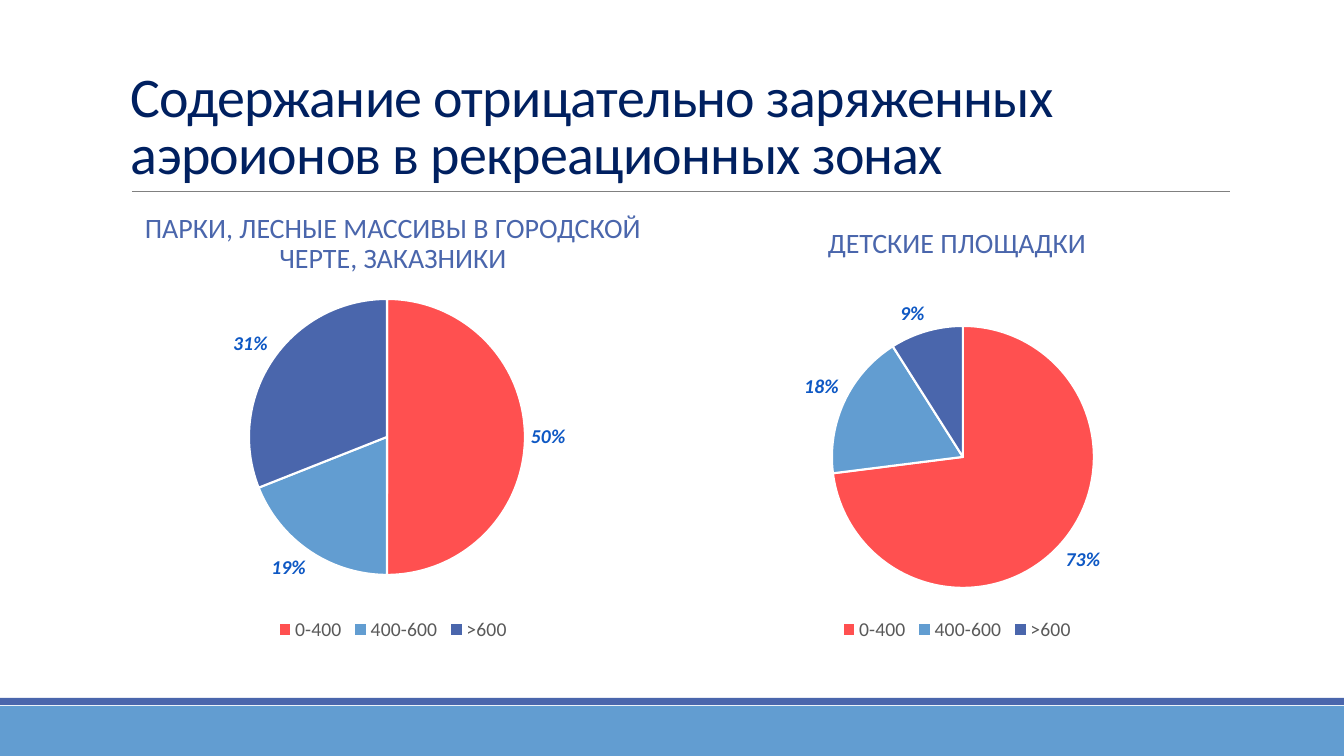
from dataclasses import dataclass

from lxml.etree import SubElement
from pptx import Presentation
from pptx.chart.data import CategoryChartData
from pptx.dml.color import RGBColor
from pptx.enum.chart import XL_CHART_TYPE, XL_LABEL_POSITION, XL_LEGEND_POSITION
from pptx.enum.shapes import MSO_CONNECTOR, MSO_SHAPE
from pptx.enum.text import MSO_ANCHOR, PP_ALIGN
from pptx.oxml import parse_xml
from pptx.oxml.ns import nsdecls, qn
from pptx.util import Pt

TITLE = "Содержание отрицательно заряженных аэроионов в рекреационных зонах"
CATEGORIES = ("0-400", "400-600", ">600")
PANELS = (
    {
        "heading": "ПАРКИ, ЛЕСНЫЕ МАССИВЫ В ГОРОДСКОЙ ЧЕРТЕ, ЗАКАЗНИКИ",
        "values": (50, 19, 31),
        "pie": (128, 15, 276),
    },
    {
        "heading": "ДЕТСКИЕ ПЛОЩАДКИ",
        "values": (73, 18, 9),
        "pie": (147, 42, 262),
    },
)


@dataclass(frozen=True)
class Theme:
    font: str = "Calibri"
    title: str = "002060"
    heading: str = "4A66AC"
    rule: str = "808080"
    band: str = "629DD1"
    stripe: str = "4A66AC"
    separator: str = "FFFFFF"
    label: str = "0E58C4"
    legend: str = "595959"
    slices: tuple = ("FF5050", "629DD1", "4A66AC")
    title_size: int = 40
    heading_size: int = 20
    chart_size: int = 14


THEME = Theme()
SLIDE_WIDTH, SLIDE_HEIGHT = 1344, 756
LEFT = 121
PANEL_WIDTH, PANEL_GAP = 544, 20
HEADING_TOP, HEADING_HEIGHT = 204, 81
CHART_TOP, CHART_HEIGHT = 284, 362


def px(length):
    return round(length * 914400 / 100.8)


def color(value):
    return RGBColor.from_string(value)


def style_font(font, size, fill, bold=False, italic=False):
    font.name = THEME.font
    font.size = Pt(size)
    font.bold = bold
    font.italic = italic
    font.color.rgb = color(fill)


def add_text(slide, text, box, *, size, fill, anchor, align=PP_ALIGN.LEFT,
             line_spacing=1.0, tracking=0):
    frame = slide.shapes.add_textbox(*map(px, box)).text_frame
    frame.word_wrap = True
    frame.vertical_anchor = anchor
    paragraph = frame.paragraphs[0]
    paragraph.alignment = align
    paragraph.line_spacing = line_spacing
    run = paragraph.add_run()
    run.text = text
    style_font(run.font, size, fill)
    if tracking:
        run.font._element.set("spc", str(tracking))


def add_bar(slide, top, height, fill):
    shape = slide.shapes.add_shape(
        MSO_SHAPE.RECTANGLE, 0, px(top), px(SLIDE_WIDTH), px(height))
    shape.shadow.inherit = False
    shape.fill.solid()
    shape.fill.fore_color.rgb = color(fill)
    shape.line.fill.background()


def add_rule(slide, left, right, top):
    line = slide.shapes.add_connector(
        MSO_CONNECTOR.STRAIGHT, px(left), px(top), px(right), px(top))
    line.line.color.rgb = color(THEME.rule)
    line.line.width = Pt(0.5)
    SubElement(line._element.spPr, qn("a:effectLst"))


def place_pie(chart, left, top, diameter):
    fractions = {
        "x": left / PANEL_WIDTH,
        "y": top / CHART_HEIGHT,
        "w": diameter / PANEL_WIDTH,
        "h": diameter / CHART_HEIGHT,
    }
    entries = "".join(f'<c:{key} val="{value:.4f}"/>' for key, value in fractions.items())
    layout = parse_xml(
        f'<c:layout {nsdecls("c")}><c:manualLayout><c:layoutTarget val="inner"/>'
        f'<c:xMode val="edge"/><c:yMode val="edge"/>{entries}'
        '</c:manualLayout></c:layout>')
    plot_area = chart._chartSpace.chart.plotArea
    for existing in plot_area.findall(qn("c:layout")):
        plot_area.remove(existing)
    plot_area.insert(0, layout)


def add_pie(slide, left, values, pie):
    data = CategoryChartData()
    data.categories = CATEGORIES
    data.add_series("Series 1", values)
    box = (left, CHART_TOP, PANEL_WIDTH, CHART_HEIGHT)
    chart = slide.shapes.add_chart(XL_CHART_TYPE.PIE, *map(px, box), data).chart
    chart.has_title = False
    style_font(chart.font, THEME.chart_size, THEME.legend)
    chart.has_legend = True
    chart.legend.position = XL_LEGEND_POSITION.BOTTOM
    chart.legend.include_in_layout = False
    style_font(chart.legend.font, THEME.chart_size, THEME.legend)

    plot = chart.plots[0]
    plot.vary_by_categories = True
    for index, fill in enumerate(THEME.slices):
        slice_format = plot.series[0].points[index].format
        slice_format.fill.solid()
        slice_format.fill.fore_color.rgb = color(fill)
        slice_format.line.color.rgb = color(THEME.separator)
        slice_format.line.width = Pt(1.5)

    plot.has_data_labels = True
    labels = plot.data_labels
    labels.show_value = False
    labels.show_percentage = True
    labels.number_format = "0%"
    labels.number_format_is_linked = False
    labels.position = XL_LABEL_POSITION.OUTSIDE_END
    style_font(labels.font, THEME.chart_size, THEME.label, bold=True, italic=True)
    place_pie(chart, *pie)


def main():
    presentation = Presentation()
    presentation.slide_width = px(SLIDE_WIDTH)
    presentation.slide_height = px(SLIDE_HEIGHT)
    slide = presentation.slides.add_slide(presentation.slide_layouts[6])

    add_bar(slide, 706, 50, THEME.band)
    add_bar(slide, 698, 7, THEME.stripe)
    add_rule(slide, 132, 1230, 191)
    add_text(slide, TITLE, (LEFT, 31, 1109, 160), size=THEME.title_size,
             fill=THEME.title, anchor=MSO_ANCHOR.BOTTOM, line_spacing=0.85, tracking=-50)
    for index, panel in enumerate(PANELS):
        left = LEFT + index * (PANEL_WIDTH + PANEL_GAP)
        add_text(slide, panel["heading"], (left, HEADING_TOP, PANEL_WIDTH, HEADING_HEIGHT),
                 size=THEME.heading_size, fill=THEME.heading, anchor=MSO_ANCHOR.MIDDLE,
                 align=PP_ALIGN.CENTER, line_spacing=0.9)
        add_pie(slide, left, panel["values"], panel["pie"])

    presentation.save("out.pptx")


if __name__ == "__main__":
    main()
